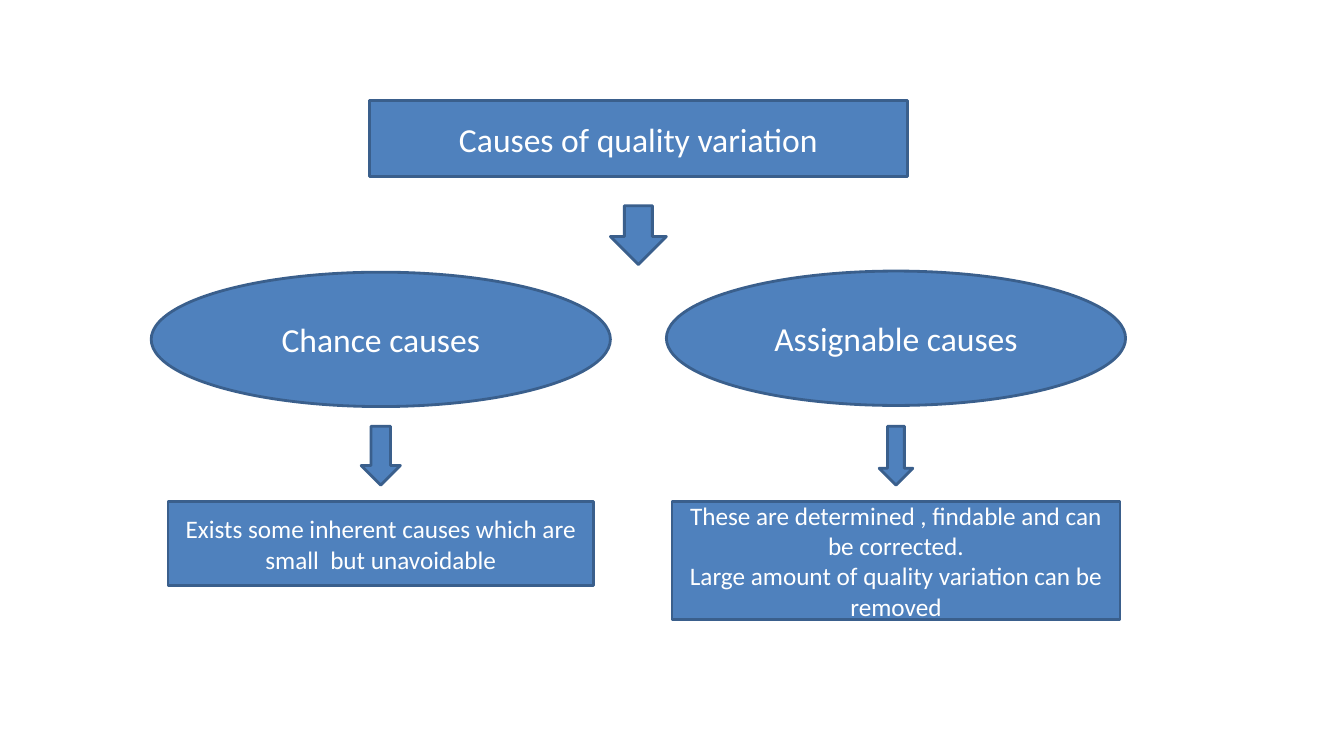
"""Build a slide that splits the causes of quality variation into two branches."""
from pptx import Presentation
from pptx.dml.color import RGBColor
from pptx.enum.shapes import MSO_SHAPE as Shape
from pptx.enum.text import MSO_ANCHOR as Anchor, PP_ALIGN as Align
from pptx.util import Pt


def color(hex_code):
    """Turn a hex string into a colour."""
    return RGBColor.from_string(hex_code)


def add_node(kind, center, top, width, height, text="", size=18):
    """Add a blue shape centred on a vertical axis, with optional text."""
    node = page.shapes.add_shape(kind, Pt(center - width / 2), Pt(top), Pt(width), Pt(height))
    node.shadow.inherit = False
    node.fill.solid()
    node.fill.fore_color.rgb = color("4F81BD")
    node.line.color.rgb = color("3A5F8C")
    node.line.width = Pt(2)
    if not text:
        return
    frame = node.text_frame
    frame.word_wrap = True
    frame.vertical_anchor = Anchor.MIDDLE
    frame.text = text
    for para in frame.paragraphs:
        para.alignment = Align.CENTER
        for span in para.runs:
            span.font.name = "Calibri"
            span.font.size = Pt(size)
            span.font.color.rgb = color("FFFFFF")


deck = Presentation()
deck.slide_width, deck.slide_height = Pt(960), Pt(540)
page = deck.slides.add_slide(deck.slide_layouts[6])

add_node(Shape.RECTANGLE, 456, 72, 384, 54, "Causes of quality variation", 24)
add_node(Shape.DOWN_ARROW, 456, 147, 40, 42)

branches = [
    (272, 194.4, "Chance causes", 28, 304, 60,
     "Exists some inherent causes which are small  but unavoidable"),
    (640, 193.6, "Assignable causes", 24, 320, 84,
     "These are determined , findable and can be corrected.\n"
     "Large amount of quality variation can be removed"),
]
for center, top, cause, arrow_width, box_width, box_height, detail in branches:
    add_node(Shape.OVAL, center, top, 328, 96, cause, 24)
    add_node(Shape.DOWN_ARROW, center, 304.5, arrow_width, 42)
    add_node(Shape.RECTANGLE, center, 358.5, box_width, box_height, detail)

deck.save("out.pptx")
